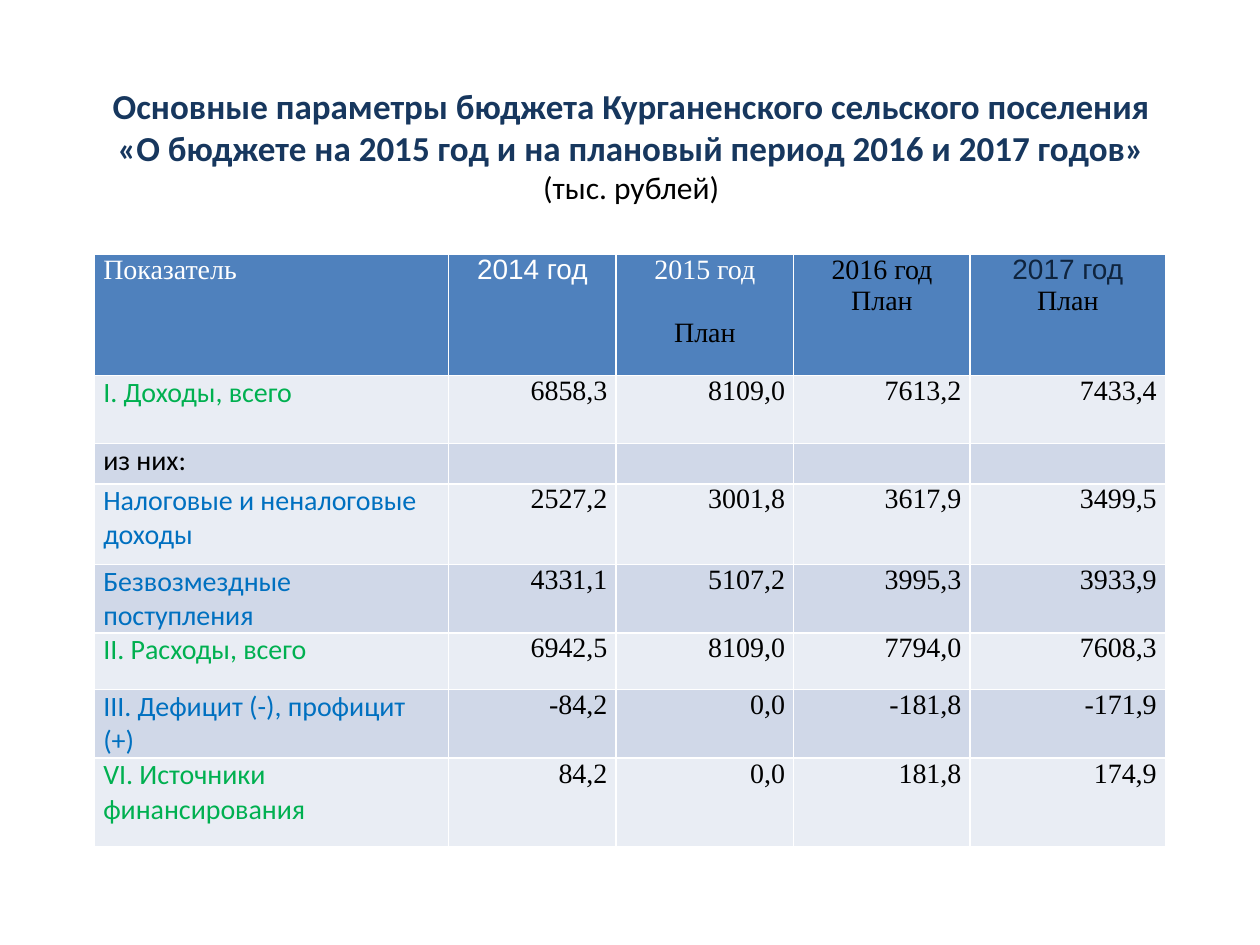
import dataclasses

import lxml.etree
import pptx
import pptx.dml.color
import pptx.enum.text
import pptx.oxml.ns
import pptx.util

Inches = pptx.util.Inches
Pt = pptx.util.Pt
Align = pptx.enum.text.PP_ALIGN
Anchor = pptx.enum.text.MSO_ANCHOR
qn = pptx.oxml.ns.qn


@dataclasses.dataclass(frozen=True)
class Theme:
    sans: str = "Calibri"
    header_sans: str = "Arial"
    serif: str = "Times New Roman"
    navy: str = "17375E"
    dark_blue: str = "0F243E"
    blue: str = "0070C0"
    green: str = "00B050"
    black: str = "000000"
    white: str = "FFFFFF"
    header_fill: str = "4F81BD"
    bands: tuple = ("E9EDF4", "D0D8E8")
    title_size: int = 20
    unit_size: int = 18
    table_size: int = 16
    border_width: int = 1


THEME = Theme()

TITLE_LINES = (
    "Основные параметры бюджета Курганенского сельского поселения",
    "«О бюджете на 2015 год и на плановый период 2016 и 2017 годов»",
)
UNIT_LINE = "(тыс. рублей)"

# Each header cell: lines of (text, font, colour), then the gap between lines in points
HEADER = (
    ([("Показатель", THEME.serif, THEME.white)], 0),
    ([("2014 год", THEME.header_sans, THEME.white)], 0),
    ([("2015 год", THEME.serif, THEME.white), ("План", THEME.serif, THEME.black)], 18.4),
    ([("2016 год", THEME.serif, THEME.black), ("План", THEME.serif, THEME.black)], 0),
    ([("2017 год", THEME.header_sans, THEME.dark_blue), ("План", THEME.serif, THEME.black)], 0),
)
BUDGET = (
    ("I. Доходы, всего", THEME.green, ("6858,3", "8109,0", "7613,2", "7433,4")),
    ("из них:", THEME.black, ("", "", "", "")),
    ("Налоговые и неналоговые доходы", THEME.blue, ("2527,2", "3001,8", "3617,9", "3499,5")),
    ("Безвозмездные поступления", THEME.blue, ("4331,1", "5107,2", "3995,3", "3933,9")),
    ("II. Расходы, всего", THEME.green, ("6942,5", "8109,0", "7794,0", "7608,3")),
    ("III. Дефицит (-), профицит (+)", THEME.blue, ("-84,2", "0,0", "-181,8", "-171,9")),
    ("VI. Источники финансирования", THEME.green, ("84,2", "0,0", "181,8", "174,9")),
)
COLUMN_WIDTHS = (2.81, 1.33, 1.41, 1.4, 1.55)
ROW_HEIGHTS = (0.96, 0.54, 0.32, 0.64, 0.43, 0.45, 0.53, 0.7)


class SlideBuilder:
    def __init__(self, slide, theme):
        self.slide = slide
        self.theme = theme

    def style(self, run, font, size, color, bold=False):
        run.font.name = font
        run.font.size = Pt(size)
        run.font.bold = bold
        run.font.color.rgb = pptx.dml.color.RGBColor.from_string(color)

    def title(self, left, top, width, height, lines, unit):
        theme = self.theme
        heading = self.slide.shapes.title
        heading.left, heading.top, heading.width, heading.height = map(
            Inches, (left, top, width, height))
        frame = heading.text_frame
        frame.word_wrap = True
        frame.vertical_anchor = Anchor.MIDDLE
        paragraph = frame.paragraphs[0]
        paragraph.text = "\v".join((*lines, unit))
        paragraph.alignment = Align.CENTER
        for run in paragraph.runs[:-1]:
            self.style(run, theme.sans, theme.title_size, theme.navy, bold=True)
        self.style(paragraph.runs[-1], theme.sans, theme.unit_size, theme.black)
        for line_break in paragraph._p.findall(qn("a:br")):
            lxml.etree.SubElement(line_break, qn("a:rPr"), sz=str(theme.title_size * 100))

    def borders(self, cell):
        """Draw all four sides; call before the fill, which must follow them in the XML."""
        properties = cell._tc.get_or_add_tcPr()
        for side in ("a:lnL", "a:lnR", "a:lnT", "a:lnB"):
            line = lxml.etree.SubElement(
                properties, qn(side), w=str(Pt(self.theme.border_width)))
            fill = lxml.etree.SubElement(line, qn("a:solidFill"))
            lxml.etree.SubElement(fill, qn("a:srgbClr"), val=self.theme.white)

    def cell(self, cell, lines, fill, align, gap=0):
        cell.margin_left = cell.margin_right = Inches(0.07)
        cell.margin_top = cell.margin_bottom = 0
        self.borders(cell)
        cell.fill.solid()
        cell.fill.fore_color.rgb = pptx.dml.color.RGBColor.from_string(fill)
        cell.text_frame.text = "\n".join(text for text, _, _ in lines)
        for index, (paragraph, (_, font, color)) in enumerate(
                zip(cell.text_frame.paragraphs, lines)):
            paragraph.alignment = align
            if index and gap:
                paragraph.space_before = Pt(gap)
            for run in paragraph.runs:
                self.style(run, font, self.theme.table_size, color)

    def budget_table(self, left, top, widths, heights, header, budget):
        theme = self.theme
        table = self.slide.shapes.add_table(
            len(heights), len(widths), Inches(left), Inches(top),
            Inches(sum(widths)), Inches(sum(heights))).table
        for column, width in zip(table.columns, widths):
            column.width = Inches(width)
        for row, height in zip(table.rows, heights):
            row.height = Inches(height)
        for column, (lines, gap) in enumerate(header):
            align = Align.CENTER if column else Align.LEFT
            self.cell(table.cell(0, column), lines, theme.header_fill, align, gap)
        for row, (indicator, color, amounts) in enumerate(budget, start=1):
            band = theme.bands[(row - 1) % 2]
            self.cell(table.cell(row, 0), [(indicator, theme.sans, color)], band, Align.LEFT)
            for column, amount in enumerate(amounts, start=1):
                self.cell(table.cell(row, column), [(amount, theme.serif, theme.black)],
                          band, Align.RIGHT)


def main():
    presentation = pptx.Presentation()
    presentation.slide_width = Inches(10)
    presentation.slide_height = Inches(7.5)
    title_only = presentation.slide_layouts[5]
    builder = SlideBuilder(presentation.slides.add_slide(title_only), THEME)
    builder.title(0.51, 0.44, 9, 1.42, TITLE_LINES, UNIT_LINE)
    builder.budget_table(0.75, 2.02, COLUMN_WIDTHS, ROW_HEIGHTS, HEADER, BUDGET)
    presentation.save("out.pptx")


if __name__ == "__main__":
    main()
